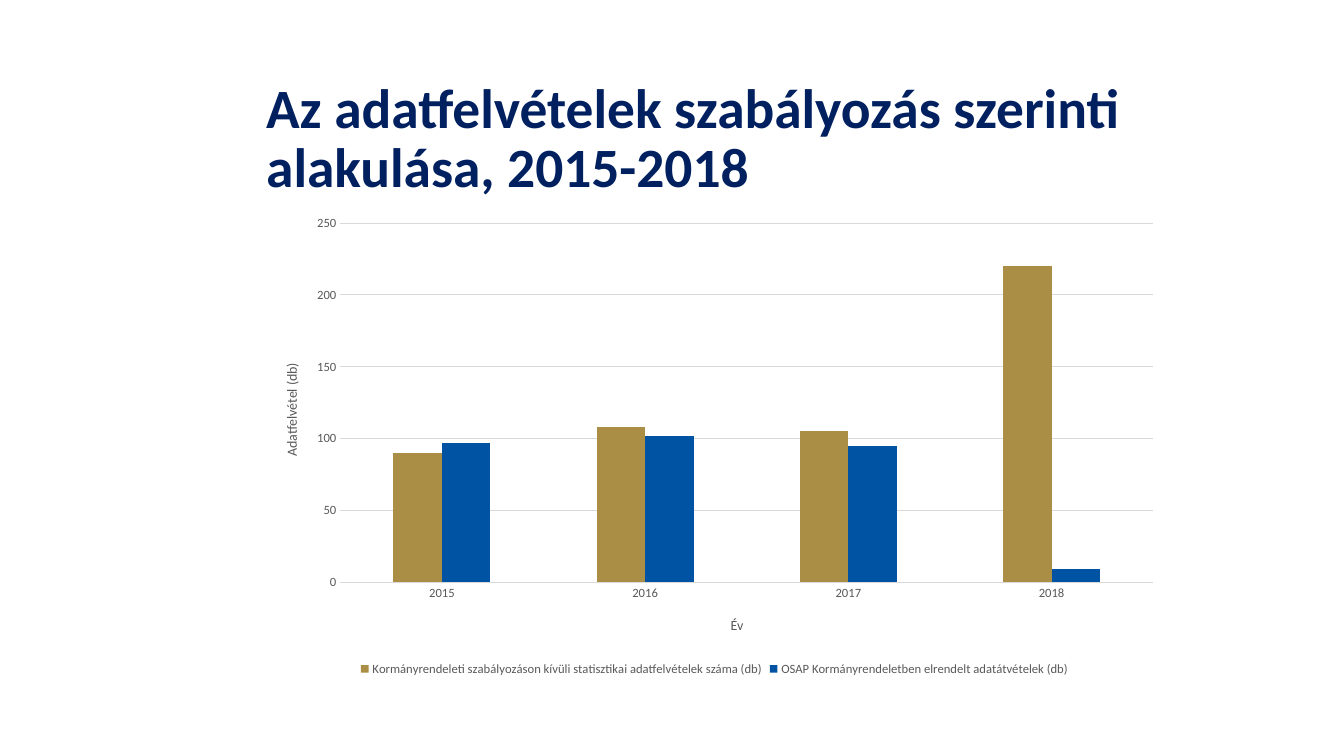
from lxml import etree
from pptx import Presentation
from pptx import util as u
from pptx.chart.data import CategoryChartData
from pptx.dml.color import RGBColor
from pptx.enum import chart as ch
from pptx.enum import text as tx
from pptx.oxml.ns import qn

FONT = "Calibri"
NAVY, GOLD, BLUE, GREY, RULE = "002060", "AB8E45", "0053A2", "595959", "D9D9D9"
YEARS = ["2015", "2016", "2017", "2018"]
SURVEYS = [
    ("Kormányrendeleti szabályozáson kívüli statisztikai adatfelvételek száma (db)",
     [90, 108, 105, 220], GOLD),
    ("OSAP Kormányrendeletben elrendelt adatátvételek (db)",
     [97, 102, 95, 9], BLUE),
]


def color(hex_value):
    return RGBColor.from_string(hex_value)


def style_font(font, size, hex_value, bold=False):
    font.name = FONT
    font.size = u.Pt(size)
    font.bold = bold
    font.color.rgb = color(hex_value)


def write(frame, wording, size=10, hex_value=GREY, bold=False, spacing=None):
    paragraph = frame.paragraphs[0]
    run = paragraph.add_run()
    run.text = wording
    style_font(run.font, size, hex_value, bold)
    if spacing:
        paragraph.line_spacing = spacing


def rule(line, hex_value):
    line.color.rgb = color(hex_value)
    line.width = u.Pt(0.75)


def place(layout, **settings):
    for child in list(layout):
        layout.remove(child)
    manual = etree.SubElement(layout, qn("c:manualLayout"))
    for tag, value in settings.items():
        etree.SubElement(manual, qn(f"c:{tag}")).set("val", str(value))


def name_axis(axis, wording, x, y):
    write(axis.axis_title.text_frame, wording)
    title = axis.axis_title._element
    layout = title.find(qn("c:layout"))
    if layout is None:
        layout = etree.Element(qn("c:layout"))
        title.find(qn("c:tx")).addnext(layout)
    place(layout, xMode="edge", yMode="edge", x=x, y=y)


def add_heading(slide, left, top, width, height):
    heading = slide.shapes.title
    heading.left, heading.top, heading.width, heading.height = map(
        u.Inches, (left, top, width, height))
    frame = heading.text_frame
    frame.word_wrap = True
    frame.auto_size = tx.MSO_AUTO_SIZE.NONE
    frame.vertical_anchor = tx.MSO_ANCHOR.MIDDLE
    write(frame, "Az adatfelvételek szabályozás szerinti alakulása, 2015-2018",
          size=39.6, hex_value=NAVY, bold=True, spacing=0.9)
    frame.paragraphs[0].alignment = tx.PP_ALIGN.LEFT


def add_survey_chart(slide, left, top, width, height):
    data = CategoryChartData()
    data.categories = YEARS
    for name, counts, _ in SURVEYS:
        data.add_series(name, counts)
    chart = slide.shapes.add_chart(
        ch.XL_CHART_TYPE.COLUMN_CLUSTERED,
        *map(u.Inches, (left, top, width, height)), data).chart
    chart.has_title = False
    style_font(chart.font, 10, "000000")

    plot = chart.plots[0]
    plot.gap_width = 219
    plot.overlap = 0
    plot.vary_by_categories = False
    for series, (_, _, fill) in zip(plot.series, SURVEYS):
        series.format.fill.solid()
        series.format.fill.fore_color.rgb = color(fill)
        series.invert_if_negative = False

    years, counts = chart.category_axis, chart.value_axis
    for axis in (years, counts):
        axis.major_tick_mark = axis.minor_tick_mark = ch.XL_TICK_MARK.NONE
        style_font(axis.tick_labels.font, 9, GREY)
    rule(years.format.line, RULE)
    counts.format.line.fill.background()
    counts.minimum_scale, counts.maximum_scale, counts.major_unit = 0, 250, 50
    rule(counts.major_gridlines.format.line, RULE)
    name_axis(years, "Év", 0.515, 0.86)
    name_axis(counts, "Adatfelvétel (db)", 0.025, 0.325)

    chart.has_legend = True
    chart.legend.position = ch.XL_LEGEND_POSITION.BOTTOM
    chart.legend.include_in_layout = False
    style_font(chart.legend.font, 9, GREY)

    area = plot._element.getparent()
    layout = area.find(qn("c:layout"))
    if layout is None:
        layout = etree.Element(qn("c:layout"))
        area.insert(0, layout)
    place(layout, layoutTarget="inner", xMode="edge", yMode="edge",
          x=0.091, y=0.035, w=0.889, h=0.758)


def main():
    deck = Presentation()
    deck.slide_width, deck.slide_height = u.Inches(13.33), u.Inches(7.5)
    slide = deck.slides.add_slide(deck.slide_layouts[5])
    add_heading(slide, 2.54, 0.93, 9.07, 0.92)
    add_survey_chart(slide, 2.55, 2.05, 9.07, 4.7)
    deck.save("out.pptx")


if __name__ == "__main__":
    main()
